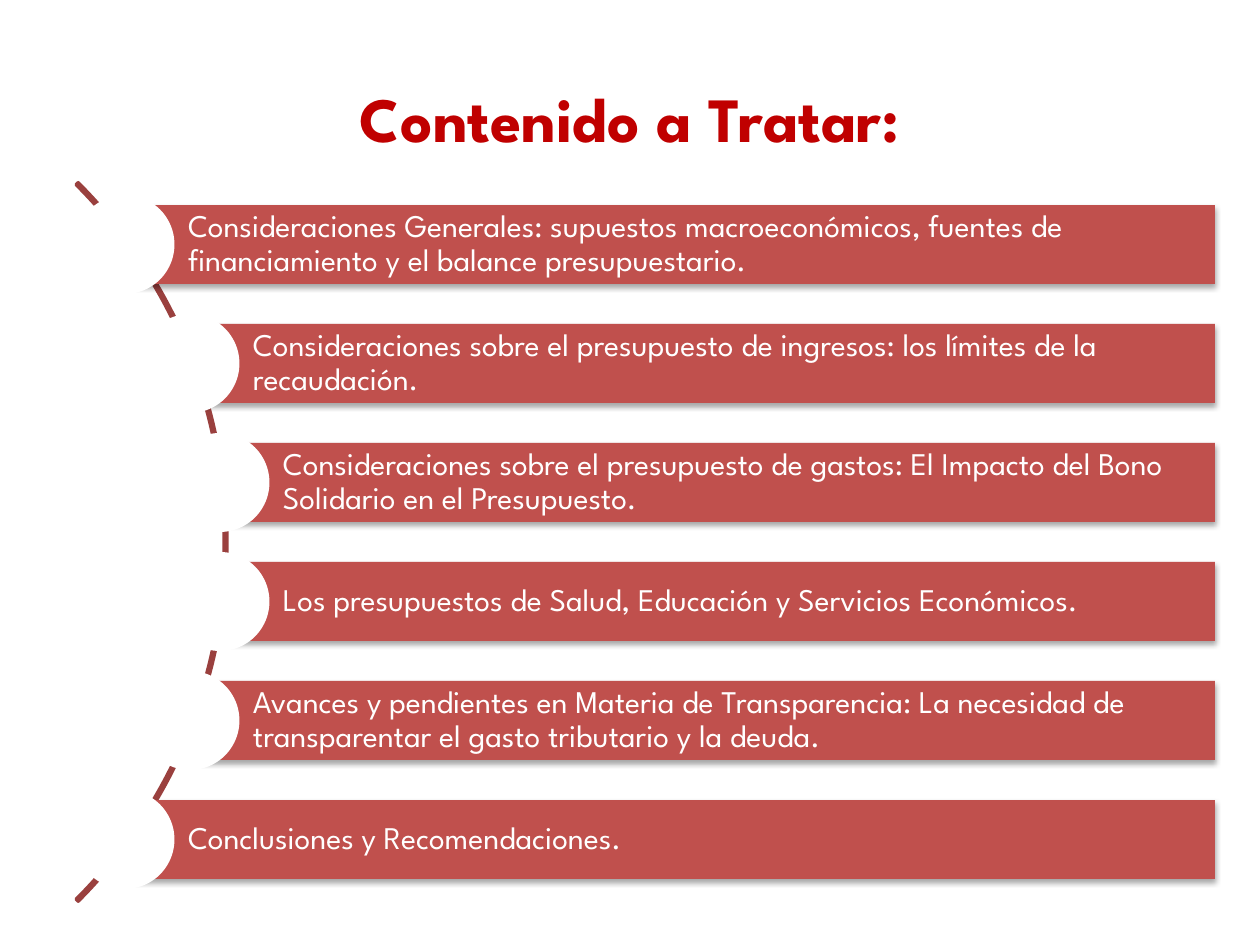
from lxml import etree
from pptx import Presentation
from pptx.dml.color import RGBColor
from pptx.enum.shapes import MSO_SHAPE
from pptx.enum.text import MSO_ANCHOR, PP_ALIGN
from pptx.oxml.ns import qn
from pptx.util import Emu, Pt

RECTANGLE, OVAL, BLOCK_ARC = MSO_SHAPE.RECTANGLE, MSO_SHAPE.OVAL, MSO_SHAPE.BLOCK_ARC
MIDDLE = MSO_ANCHOR.MIDDLE
LEFT, CENTER = PP_ALIGN.LEFT, PP_ALIGN.CENTER

FONT = "League Spartan"
RED, BAR_RED, ARC_RED, WHITE = "C00000", "C0504D", "9A403E", "FFFFFF"

# Layout in px
BAR_TOP, BAR_STEP, BAR_HEIGHT, BAR_RIGHT = 205, 119, 79, 1215
CIRCLE = 99
ARC_CENTER_X, ARC_CENTER_Y, ARC_RADIUS = -281, 542, 508

# Left edge of each bar and its text
TOPICS = [
    (125, "Consideraciones Generales: supuestos macroeconómicos, fuentes de "
          "financiamiento y el balance presupuestario."),
    (190, "Consideraciones sobre el presupuesto de ingresos: los límites de la recaudación."),
    (220, "Consideraciones sobre el presupuesto de gastos: El Impacto del Bono "
          "Solidario en el Presupuesto."),
    (220, "Los presupuestos de Salud, Educación y Servicios Económicos."),
    (190, "Avances y pendientes en Materia de Transparencia: La necesidad de "
          "transparentar el gasto tributario y la deuda."),
    (125, "Conclusiones y Recomendaciones."),
]


def px(length):
    return Emu(round(length * 914400 / 126))


def color(value):
    return RGBColor.from_string(value)


def write(shape, text, size, text_color, align, bold=False):
    frame = shape.text_frame
    frame.text = text
    frame.word_wrap = True
    frame.vertical_anchor = MIDDLE
    para = frame.paragraphs[0]
    para.alignment = align
    font = para.runs[0].font
    font.name, font.size, font.bold = FONT, Pt(size), bold
    font.color.rgb = color(text_color)


def add_shape(group, kind, left, top, width, height, fill=None):
    shape = group.shapes.add_shape(kind, px(left), px(top), px(width), px(height))
    shape.shadow.inherit = False
    shape.line.fill.background()
    if fill:
        shape.fill.solid()
        shape.fill.fore_color.rgb = color(fill)
    else:
        shape.fill.background()
    return shape


def add_drop_shadow(shape):
    effects = shape.element.spPr.find(qn("a:effectLst"))
    shadow = etree.SubElement(effects, qn("a:outerShdw"), blurRad=str(Pt(3.1)),
                              dist=str(Pt(1.8)), dir="5400000", rotWithShape="0")
    tint = etree.SubElement(shadow, qn("a:srgbClr"), val="000000")
    etree.SubElement(tint, qn("a:alpha"), val="35000")


def add_title(page, text):
    title = page.shapes.title
    title.left, title.top, title.width, title.height = px(63), px(38), px(1134), px(158)
    write(title, text, 36, RED, CENTER, bold=True)


def add_arc(group):
    arc = add_shape(group, BLOCK_ARC, ARC_CENTER_X - ARC_RADIUS, ARC_CENTER_Y - ARC_RADIUS,
                    2 * ARC_RADIUS, 2 * ARC_RADIUS)
    # Start angle, end angle and thickness
    for index, value in enumerate((189, 27, 0.0027)):
        arc.adjustments[index] = value
    arc.line.color.rgb = color(ARC_RED)
    arc.line.width = Pt(2)


def add_topic(group, left, top, text):
    bar = add_shape(group, RECTANGLE, left, top, BAR_RIGHT - left, BAR_HEIGHT, BAR_RED)
    add_drop_shadow(bar)
    write(bar, text, 18, WHITE, LEFT)
    frame = bar.text_frame
    frame.margin_left = px(63)
    frame.margin_top = frame.margin_right = frame.margin_bottom = px(6)
    frame.paragraphs[0].line_spacing = 0.9
    # Circle centred on the left edge of the bar
    add_shape(group, OVAL, left - CIRCLE / 2, top + (BAR_HEIGHT - CIRCLE) / 2,
              CIRCLE, CIRCLE, WHITE)


def main():
    deck = Presentation()
    deck.slide_width, deck.slide_height = px(1260), px(945)
    page = deck.slides.add_slide(deck.slide_layouts[5])

    add_title(page, "Contenido a Tratar:")

    # Curved list of topics
    diagram = page.shapes.add_group_shape()
    add_arc(diagram)
    for index, (left, text) in enumerate(TOPICS):
        add_topic(diagram, left, BAR_TOP + index * BAR_STEP, text)

    deck.save("out.pptx")


if __name__ == "__main__":
    main()
